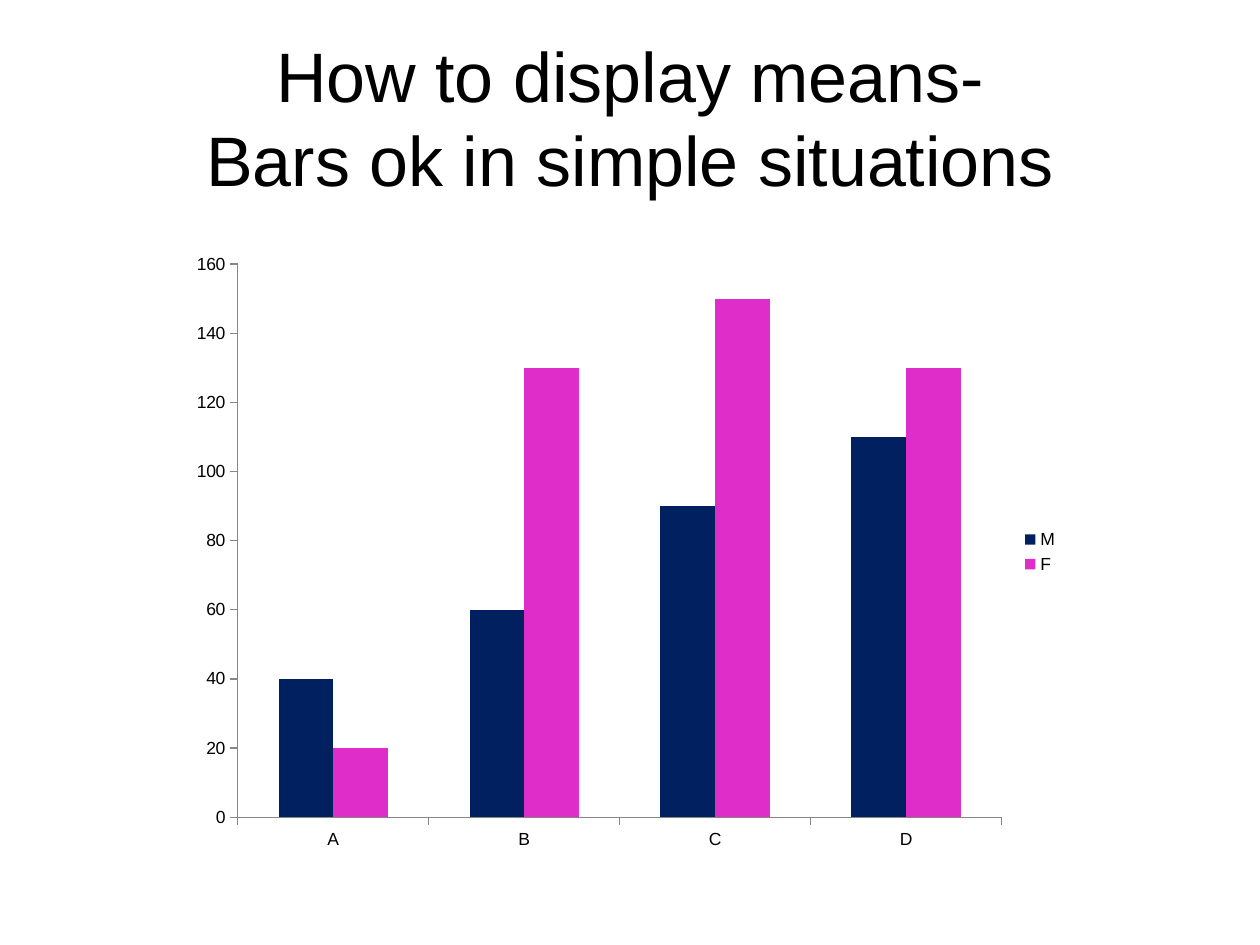
from pptx import Presentation
from pptx.chart.data import CategoryChartData
from pptx.dml.color import RGBColor
from pptx.enum.chart import XL_CHART_TYPE, XL_LEGEND_POSITION, XL_TICK_MARK
from pptx.enum.text import MSO_ANCHOR, PP_ALIGN
from pptx.util import Inches, Pt

BLACK = RGBColor(0x00, 0x00, 0x00)
AXIS_GRAY = RGBColor(0x86, 0x86, 0x86)
NAVY = RGBColor(0x00, 0x20, 0x60)
MAGENTA = RGBColor(0xDF, 0x2D, 0xCA)


class SlideBuilder:
    font_name = "Arial"
    title_size = Pt(40)
    title_line_height = Pt(48)
    chart_size = Pt(10)

    def __init__(self, slide):
        self.slide = slide

    def style_font(self, font, size):
        font.name = self.font_name
        font.size = size
        font.color.rgb = BLACK

    def title(self, lines, left, top, width, height):
        shape = self.slide.shapes.title
        shape.left, shape.top = Inches(left), Inches(top)
        shape.width, shape.height = Inches(width), Inches(height)
        frame = shape.text_frame
        frame.word_wrap = True
        frame.vertical_anchor = MSO_ANCHOR.MIDDLE
        paragraph = frame.paragraphs[0]
        paragraph.alignment = PP_ALIGN.CENTER
        paragraph.line_spacing = self.title_line_height
        for index, line in enumerate(lines):
            if index:
                paragraph.add_line_break()
            run = paragraph.add_run()
            run.text = line
            self.style_font(run.font, self.title_size)

    def column_chart(self, categories, series, left, top, width, height):
        chart_data = CategoryChartData()
        chart_data.categories = categories
        for name, values, color in series:
            chart_data.add_series(name, values)
        chart = self.slide.shapes.add_chart(
            XL_CHART_TYPE.COLUMN_CLUSTERED,
            Inches(left), Inches(top), Inches(width), Inches(height),
            chart_data,
        ).chart
        chart.has_title = False
        self.style_font(chart.font, self.chart_size)
        chart.has_legend = True
        chart.legend.position = XL_LEGEND_POSITION.RIGHT
        chart.legend.include_in_layout = False
        for axis in (chart.category_axis, chart.value_axis):
            axis.has_major_gridlines = False
            axis.major_tick_mark = XL_TICK_MARK.OUTSIDE
            axis.minor_tick_mark = XL_TICK_MARK.NONE
            axis.format.line.color.rgb = AXIS_GRAY
            axis.format.line.width = Pt(0.75)
        chart.value_axis.minimum_scale = 0
        chart.value_axis.maximum_scale = 160
        chart.value_axis.major_unit = 20
        plot = chart.plots[0]
        plot.gap_width = 150
        plot.overlap = 0
        plot.vary_by_categories = False
        for plotted, (name, values, color) in zip(plot.series, series):
            plotted.format.fill.solid()
            plotted.format.fill.fore_color.rgb = color


def main():
    presentation = Presentation()
    presentation.slide_width = Inches(10)
    presentation.slide_height = Inches(7.5)
    slide = presentation.slides.add_slide(presentation.slide_layouts[5])
    builder = SlideBuilder(slide)
    builder.title(
        ["How to display means-", "Bars ok in simple situations"],
        0.5, 0.3, 9, 1.25,
    )
    builder.column_chart(
        ["A", "B", "C", "D"],
        [
            ("M", (40, 60, 90, 110), NAVY),
            ("F", (20, 130, 150, 130), MAGENTA),
        ],
        1.42, 1.92, 7.08, 4.92,
    )
    presentation.save("out.pptx")


if __name__ == "__main__":
    main()
